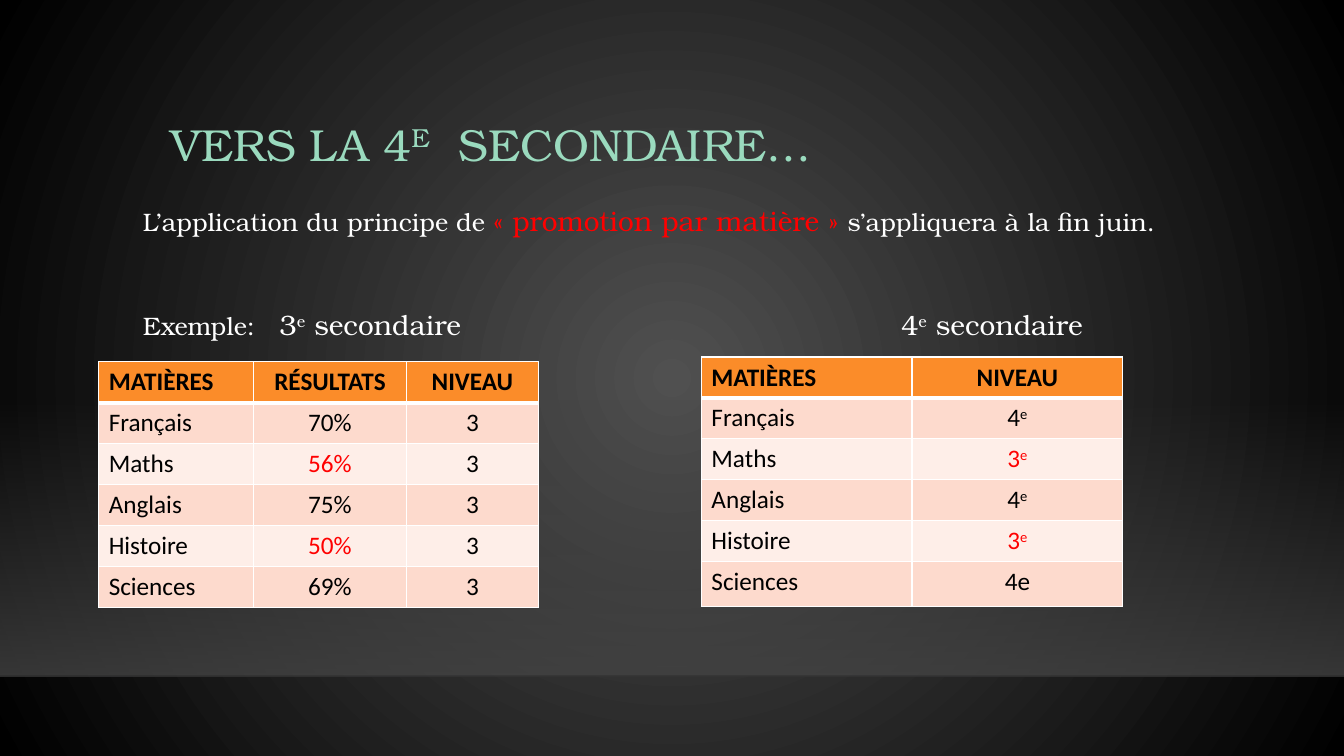
"""Build the slide on promotion by subject towards the fourth secondary year."""
from dataclasses import dataclass

from lxml import etree
from pptx import Presentation
from pptx.dml.color import RGBColor
from pptx.enum.shapes import MSO_CONNECTOR, MSO_SHAPE
from pptx.enum.text import MSO_ANCHOR, PP_ALIGN
from pptx.oxml import parse_xml
from pptx.oxml.ns import nsdecls, qn
from pptx.util import Pt

RECTANGLE = MSO_SHAPE.RECTANGLE
STRAIGHT = MSO_CONNECTOR.STRAIGHT
TOP, MIDDLE = MSO_ANCHOR.TOP, MSO_ANCHOR.MIDDLE
LEFT, CENTER = PP_ALIGN.LEFT, PP_ALIGN.CENTER


@dataclass(frozen=True)
class Theme:
    """Colours, fonts and type sizes of the slide."""

    glow: str = "505050"
    dark: str = "000000"
    floor: str = "454545"
    edge: str = "000001"
    title: str = "9ADABE"
    body: str = "FFFFFF"
    alert: str = "FF0000"
    cell_text: str = "000000"
    border: str = "FFFFFF"
    header: str = "FB8C29"
    bands: tuple = ("FDDACD", "FEEEE8")
    serif: str = "TeX Gyre Bonum"
    sans: str = "Calibri"
    title_size: int = 32
    accent_size: int = 20
    text_size: int = 18


THEME = Theme()
WIDTH, HEIGHT = 960, 540
HORIZON = 483
ROW_HEIGHT = 29.2


def set_gradient(fill, element, stops, direction):
    """Give the fill of an element a gradient of (position, colour, opacity) stops."""
    fill.gradient()
    marks = "".join(
        f'<a:gs pos="{position * 1000}"><a:srgbClr val="{color}">'
        f'<a:alpha val="{opacity * 1000}"/></a:srgbClr></a:gs>'
        for position, color, opacity in stops
    )
    gradient = parse_xml(
        f'<a:gradFill {nsdecls("a")} rotWithShape="1">'
        f"<a:gsLst>{marks}</a:gsLst>{direction}</a:gradFill>"
    )
    current = next(element.iter(qn("a:gradFill")))
    current.getparent().replace(current, gradient)


def paint_background(page):
    """Fill the page with a glow that darkens towards the corners."""
    direction = (
        '<a:path path="circle"><a:fillToRect l="50000" t="50000" '
        'r="50000" b="50000"/></a:path>'
    )
    stops = [(0, THEME.glow, 100), (100, THEME.dark, 100)]
    set_gradient(page.background.fill, page._element, stops, direction)


def add_floor(page):
    """Add the lit band above the horizon and the horizon line."""
    top = 285
    band = page.shapes.add_shape(RECTANGLE, 0, Pt(top), Pt(WIDTH), Pt(HORIZON - top))
    band.shadow.inherit = False
    band.line.fill.background()
    stops = [(0, THEME.floor, 0), (100, THEME.floor, 80)]
    set_gradient(band.fill, band._element, stops, '<a:lin ang="5400000" scaled="0"/>')
    line = page.shapes.add_connector(STRAIGHT, 0, Pt(HORIZON), Pt(WIDTH), Pt(HORIZON))
    line.line.width = Pt(1)
    line.line.color.rgb = RGBColor.from_string(THEME.edge)
    color = next(line._element.iter(qn("a:srgbClr")))
    etree.SubElement(color, qn("a:alpha")).set("val", "20000")
    etree.SubElement(line._element.spPr, qn("a:effectLst"))


def set_font(font, name=None, size=None, color=None, bold=None):
    """Set the given properties of a font."""
    if name:
        font.name = name
    if size:
        font.size = Pt(size)
    if color:
        font.color.rgb = RGBColor.from_string(color)
    if bold is not None:
        font.bold = bold


def add_span(para, text, raised=False, **style):
    """Add one run to a paragraph, raised if asked."""
    span = para.add_run()
    span.text = text
    set_font(span.font, **style)
    if raised:
        span._r.get_or_add_rPr().set("baseline", "30000")


def write(para, text, **style):
    """Write text in which a caret raises the letter after it."""
    first, *others = text.split("^")
    add_span(para, first, **style)
    for other in others:
        add_span(para, other[0], raised=True, **style)
        if other[1:]:
            add_span(para, other[1:], **style)


def add_tabs(para, *stops):
    """Give a paragraph left tab stops at the given lengths."""
    tabs = etree.SubElement(para._p.get_or_add_pPr(), qn("a:tabLst"))
    for stop in stops:
        tab = etree.SubElement(tabs, qn("a:tab"))
        tab.set("pos", str(Pt(stop)))
        tab.set("algn", "l")


def add_text_box(page, left, top, width, height, anchor=TOP):
    """Add a wrapping text box and return its text frame."""
    box = page.shapes.add_textbox(Pt(left), Pt(top), Pt(width), Pt(height))
    box.text_frame.word_wrap = True
    box.text_frame.vertical_anchor = anchor
    return box.text_frame


def add_title(page):
    """Add the slide title."""
    para = add_text_box(page, 114.5, 63.4, 731.5, 82.8, MIDDLE).paragraphs[0]
    para.line_spacing = 0.9
    add_tabs(para, 206)
    set_font(para.font, THEME.serif, THEME.title_size, THEME.title)
    write(para, "VERS LA 4^E\tSECONDAIRE…")


def add_body(page):
    """Add the principle and the captions of both tables."""
    frame = add_text_box(page, 95, 136.8, 794, 314.6)
    principle, captions = frame.paragraphs[0], frame.add_paragraph()
    captions.space_before = Pt(46)
    add_tabs(captions, 97.5, 541.5)
    for para in (principle, captions):
        para.line_spacing = 1.2
        set_font(para.font, THEME.serif, THEME.text_size, THEME.body)
    write(principle, "L’application du principe de ")
    write(principle, "« promotion par matière » ", size=THEME.accent_size, color=THEME.alert)
    write(principle, "s’appliquera à la fin juin.")
    write(captions, "Exemple:")
    write(captions, "\t3^e secondaire\t4^e secondaire", size=THEME.accent_size)


def set_borders(cell, top, bottom):
    """Draw the four borders of a cell, with top and bottom widths in points."""
    for side, width in (("L", 1), ("R", 1), ("T", top), ("B", bottom)):
        cell._tc.get_or_add_tcPr().append(parse_xml(
            f'<a:ln{side} {nsdecls("a")} w="{Pt(width)}"><a:solidFill>'
            f'<a:srgbClr val="{THEME.border}"/></a:solidFill></a:ln{side}>'
        ))


def fill_cell(cell, text, row, column, color):
    """Write and style one cell according to its row and column."""
    set_borders(cell, 3 if row == 1 else 1, 3 if row == 0 else 1)
    fill = THEME.bands[(row - 1) % 2] if row else THEME.header
    cell.fill.solid()
    cell.fill.fore_color.rgb = RGBColor.from_string(fill)
    para = cell.text_frame.paragraphs[0]
    para.alignment = CENTER if column else LEFT
    set_font(para.font, THEME.sans, THEME.text_size, color, row == 0)
    write(para, text)


def add_grades(page, left, top, widths, heights, rows, alerts):
    """Add a table of subjects in which the alert values are red."""
    table = page.shapes.add_table(
        len(rows), len(widths), Pt(left), Pt(top), Pt(sum(widths)), Pt(sum(heights))
    ).table
    for column, width in zip(table.columns, widths):
        column.width = Pt(width)
    for row, height in zip(table.rows, heights):
        row.height = Pt(height)
    for i, values in enumerate(rows):
        for j, text in enumerate(values):
            color = THEME.alert if text in alerts else THEME.cell_text
            fill_cell(table.cell(i, j), text, i, j, color)


def main():
    """Build the deck and save it."""
    deck = Presentation()
    deck.slide_width, deck.slide_height = Pt(WIDTH), Pt(HEIGHT)
    page = deck.slides.add_slide(deck.slide_layouts[6])
    paint_background(page)
    add_floor(page)
    add_title(page)
    add_body(page)
    subjects = ["MATIÈRES", "Français", "Maths", "Anglais", "Histoire", "Sciences"]
    results = ["RÉSULTATS", "70%", "56%", "75%", "50%", "69%"]
    current = ["NIVEAU"] + ["3"] * 5
    following = ["NIVEAU", "4^e", "3^e", "4^e", "3^e", "4e"]
    add_grades(page, 70.5, 258.5, [110.5, 109.5, 94], [ROW_HEIGHT] * 6,
               list(zip(subjects, results, current)), {"56%", "50%"})
    add_grades(page, 501, 255, [150.5, 150.5], [ROW_HEIGHT] * 5 + [32.4],
               list(zip(subjects, following)), {"3^e"})
    deck.save("out.pptx")


if __name__ == "__main__":
    main()
